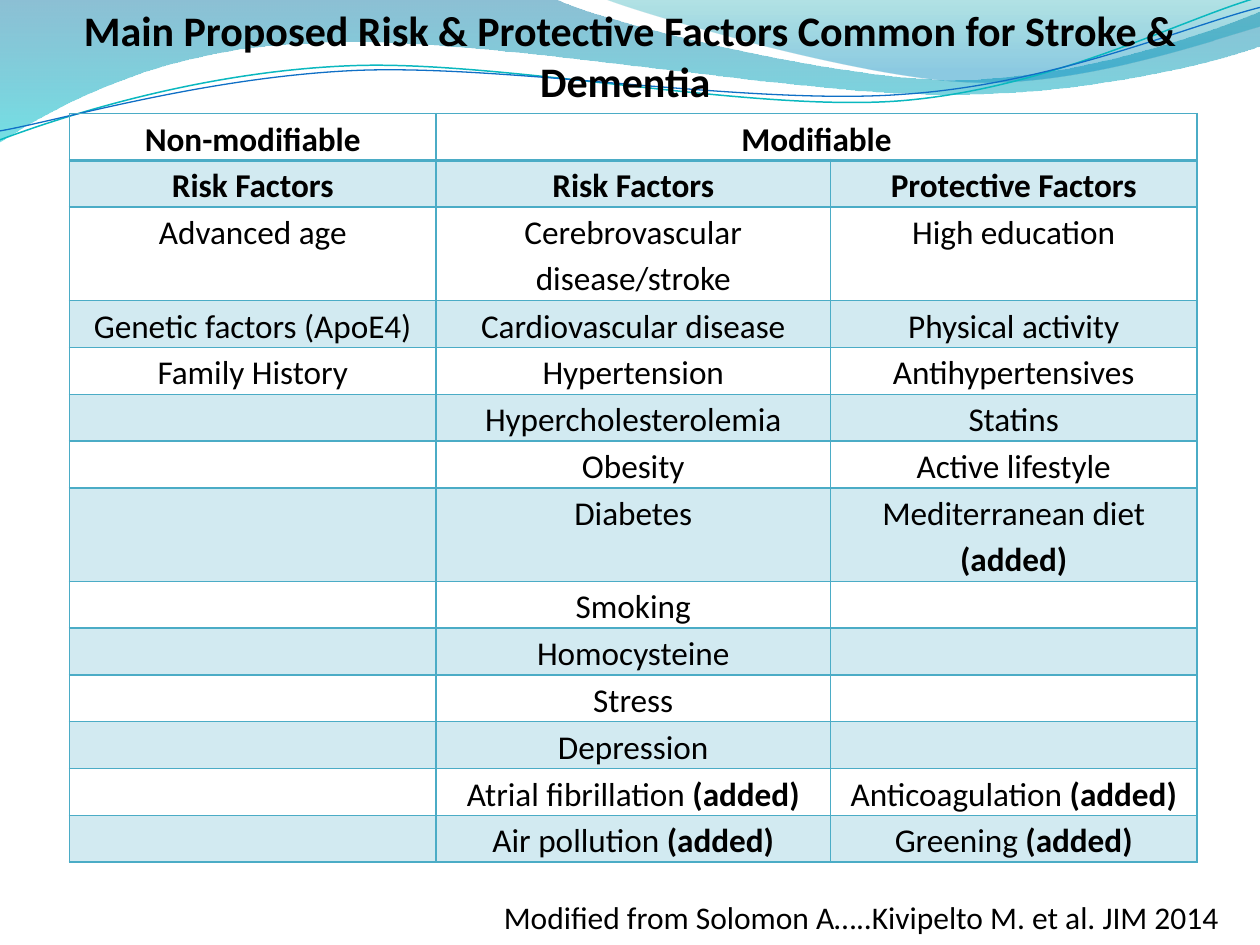
from lxml import etree
from pptx import Presentation
from pptx import util as u
from pptx.dml.color import RGBColor
from pptx.enum import text
from pptx.oxml import parse_xml
from pptx.oxml.ns import qn

TITLE = "Main Proposed Risk & Protective Factors Common for Stroke & Dementia "
SOURCE = "Modified from Solomon A…..Kivipelto M. et al. JIM 2014"
ADDED = "(added)"
ROWS = [
    ("Non-modifiable", "Modifiable", ""),
    ("Risk Factors", "Risk Factors", "Protective Factors"),
    ("Advanced age", "Cerebrovascular disease/stroke", "High education"),
    ("Genetic factors (ApoE4)", "Cardiovascular disease", "Physical activity"),
    ("Family History", "Hypertension", "Antihypertensives"),
    ("", "Hypercholesterolemia", "Statins"),
    ("", "Obesity", "Active lifestyle"),
    ("", "Diabetes", "Mediterranean diet (added)"),
    ("", "Smoking", ""),
    ("", "Homocysteine", ""),
    ("", "Stress", ""),
    ("", "Depression", ""),
    ("", "Atrial fibrillation (added)", "Anticoagulation (added)"),
    ("", "Air pollution (added)", "Greening (added)"),
]
HEADER_ROWS = 2
TALL_ROWS = (2, 7)
TABLE_HEIGHT = 15.09
COLUMN_WIDTHS = (7.39, 7.95, 7.39)

THEME = {
    "font": "Calibri", "ink": "000000", "border": "4BACC6", "band": "D2EAF1",
    "title": 24, "cell": 19, "source": 18, "thin": 1, "thick": 2.25,
}

# Outlines in cm: a pair is a straight step, six numbers are a Bezier curve.
# Gradient stops: position %, colour, opacity %.
BANDS = [
    ([(0, "0074A1", 45), (100, "00C6CF", 55)],
     [(0, 0), (11.18, -0.03),
      (12.09, 0.43, 16.87, 1.6, 19.25, 1.6),
      (21.67, 1.6, 24.33, 0.66, 25.4, 0.23), (25.43, 0.91),
      (24.97, 1.12, 22.1, 1.93, 18.95, 1.9),
      (15.8, 1.9, 9.7, 0.71, 6.53, 0.86),
      (3.28, 0.91, 1.17, 2.11, -0.03, 2.87), (0, 0)]),
    ([(0, "00A1A9", 30), (80, "008BBF", 45)],
     [(12.17, -0.03),
      (12.93, 0.28, 17.32, 1.57, 19.53, 1.65),
      (21.74, 1.75, 24.41, 0.81, 25.4, 0.53), (25.4, 0), (12.17, -0.03)]),
]
WAVES = [
    ("0AB8BF", 0.85,
     [(-0.05, 2.22), (1.19, 1.82, 4.02, 1.04, 7.05, 1.06),
      (10.05, 1.07, 15.02, 2.37, 18.08, 2.29),
      (21.13, 2.2, 23.86, 0.91, 25.41, 0.55)]),
    ("0F6FC6", 0.75,
     [(-0.04, 2.04), (1.16, 1.89, 4.17, 1.15, 7.2, 1.16),
      (10.25, 1.18, 15.13, 2.25, 18.19, 2.16),
      (21.22, 2.1, 23.93, 1.06, 25.45, 0.75)]),
]
WAVE_ROTATION = 357.3


def color(name):
    return RGBColor.from_string(THEME.get(name, name))


def add_outline(parent, outline, close):
    """Draw all points as straight steps, then join each curve's three into a Bezier."""
    start, *steps = outline
    builder = parent.shapes.build_freeform(*map(u.Cm, start))
    builder.add_line_segments(
        [(u.Cm(step[i]), u.Cm(step[i + 1])) for step in steps for i in range(0, len(step), 2)],
        close=close)
    sp = builder.convert_to_shape()
    sp.shadow.inherit = False
    lines = iter(list(sp._element.iter(qn("a:lnTo"))))
    for step in steps:
        first = next(lines)
        if len(step) == 6:
            first.tag = qn("a:cubicBezTo")
            for line in (next(lines), next(lines)):
                first.append(line[0])
                line.getparent().remove(line)
    return sp


def add_band(slide, stops, outline):
    sp = add_outline(slide, outline, True)
    sp.line.fill.background()
    sp.fill.gradient()
    sp.fill.gradient_angle = 270
    stop_list = sp.fill._fill._gradFill.find(qn("a:gsLst"))
    for old in list(stop_list):
        stop_list.remove(old)
    for position, rgb, opacity in stops:
        gs = etree.SubElement(stop_list, qn("a:gs"), pos=str(position * 1000))
        clr = etree.SubElement(gs, qn("a:srgbClr"), val=rgb)
        etree.SubElement(clr, qn("a:alpha"), val=str(opacity * 1000))


def add_wave(group, rgb, width, outline):
    sp = add_outline(group, outline, False)
    sp.rotation = WAVE_ROTATION
    sp.fill.background()
    sp.line.color.rgb = color(rgb)
    sp.line.width = u.Pt(width)


def format_run(r, size, bold=False):
    r.font.name = THEME["font"]
    r.font.size = u.Pt(THEME[size])
    r.font.bold = bold
    r.font.color.rgb = color("ink")


def fill_text(sp, words, size, align, bold=False):
    tf = sp.text_frame
    tf.word_wrap = True
    tf.auto_size = text.MSO_AUTO_SIZE.NONE
    tf.vertical_anchor = text.MSO_ANCHOR.TOP
    tf.text = words
    p = tf.paragraphs[0]
    p.alignment = align
    format_run(p.runs[0], size, bold)


def set_borders(cell, widths):
    tc_pr = cell._tc.get_or_add_tcPr()
    for side, width in widths.items():
        tc_pr.append(parse_xml(
            '<a:ln%s xmlns:a="http://schemas.openxmlformats.org/drawingml/2006/main" w="%d"'
            ' cap="flat" cmpd="sng" algn="ctr"><a:solidFill><a:srgbClr val="%s"/></a:solidFill>'
            '<a:prstDash val="solid"/></a:ln%s>'
            % (side, u.Pt(width), THEME["border"], side)))


def format_cell(cell, words, row):
    thin, thick = THEME["thin"], THEME["thick"]
    set_borders(cell, {"L": thin, "R": thin, "T": thick if row == 1 else thin,
                       "B": thick if row == 0 else thin})
    if row % 2:
        cell.fill.solid()
        cell.fill.fore_color.rgb = color("band")
    else:
        cell.fill.background()
    cell.margin_left = cell.margin_right = u.Cm(0.18)
    cell.margin_top = cell.margin_bottom = 0
    p = cell.text_frame.paragraphs[0]
    p.alignment = text.PP_ALIGN.CENTER
    p.line_spacing = 1.15
    plain, added, _ = words.partition(ADDED)
    for part, bold in ((plain, row < HEADER_ROWS), (added, True)):
        if part:
            r = p.add_run()
            r.text = part
            format_run(r, "cell", bold)


def add_factor_table(slide):
    line_height = TABLE_HEIGHT / (len(ROWS) + len(TALL_ROWS))
    table = slide.shapes.add_table(
        len(ROWS), len(COLUMN_WIDTHS), u.Cm(1.4), u.Cm(2.29),
        u.Cm(sum(COLUMN_WIDTHS)), u.Cm(TABLE_HEIGHT)).table
    table.first_row = table.horz_banding = False
    for column, width in zip(table.columns, COLUMN_WIDTHS):
        column.width = u.Cm(width)
    for i, words in enumerate(ROWS):
        table.rows[i].height = u.Cm(line_height * (2 if i in TALL_ROWS else 1))
        for j, word in enumerate(words):
            format_cell(table.cell(i, j), word, i)
    table.cell(0, 1).merge(table.cell(0, 2))


def main():
    prs = Presentation()
    prs.slide_width, prs.slide_height = u.Cm(25.4), u.Cm(19.05)
    slide = prs.slides.add_slide(prs.slide_layouts[5])
    for stops, outline in BANDS:
        add_band(slide, stops, outline)
    waves = slide.shapes.add_group_shape()
    for rgb, width, outline in WAVES:
        add_wave(waves, rgb, width, outline)

    title = slide.shapes.title
    title.left, title.top, title.width, title.height = map(u.Cm, (0, -0.03, 25.4, 2.31))
    fill_text(title, TITLE, "title", text.PP_ALIGN.CENTER, bold=True)
    title.text_frame.margin_left = title.text_frame.margin_right = u.Cm(0.4)
    slide.shapes._spTree.append(title._element)  # in front of the waves

    source = slide.shapes.add_textbox(*map(u.Cm, (-0.63, 17.97, 25.46, 1.02)))
    fill_text(source, SOURCE, "source", text.PP_ALIGN.RIGHT)
    add_factor_table(slide)
    prs.save("out.pptx")


if __name__ == "__main__":
    main()
